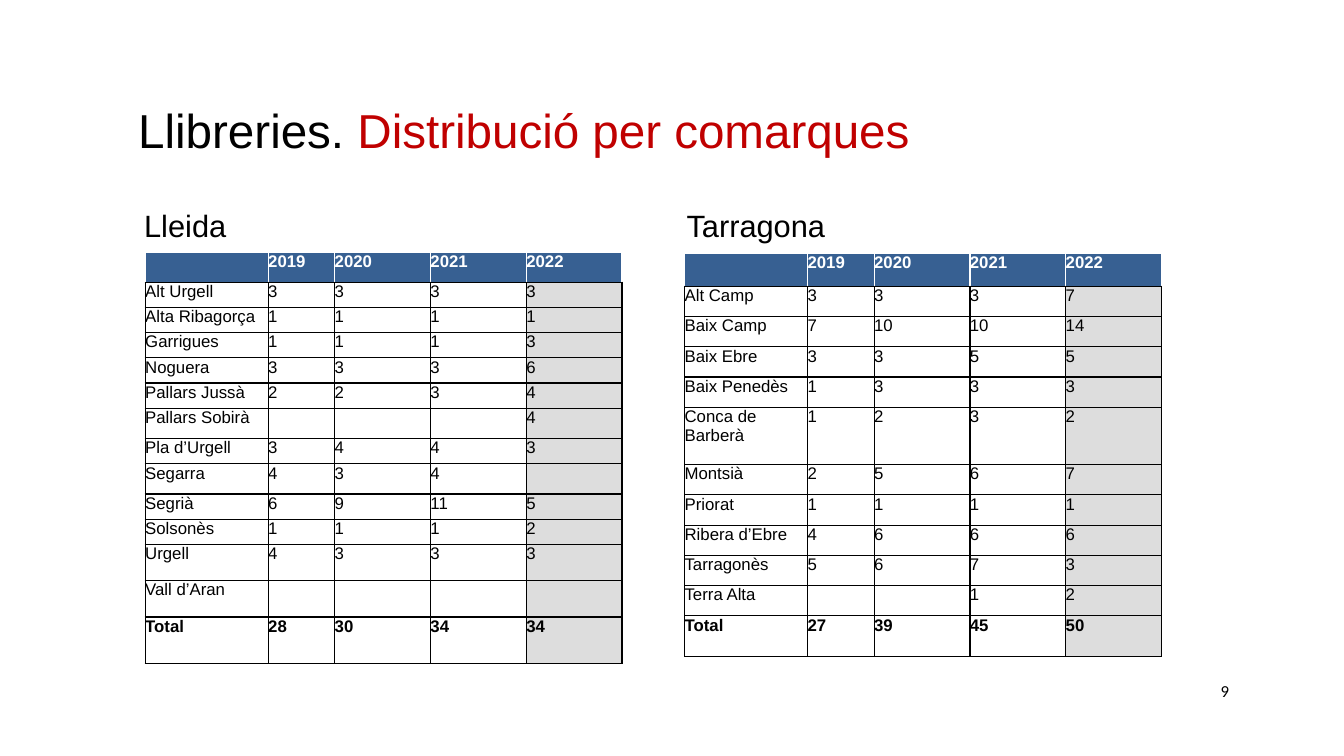
from lxml.etree import SubElement
from pptx import Presentation
from pptx.dml.color import RGBColor
from pptx.enum.text import MSO_ANCHOR as Anchor, MSO_AUTO_SIZE as AutoSize, PP_ALIGN as Align
from pptx.oxml.ns import qn
from pptx.util import Pt

PX = 9144
BLACK = RGBColor(0x00, 0x00, 0x00)
WHITE = RGBColor(0xFF, 0xFF, 0xFF)
RED = RGBColor(0xC0, 0x00, 0x00)
BLUE = RGBColor(0x37, 0x60, 0x92)
GREY = RGBColor(0xDD, 0xDD, 0xDD)

COLUMNS = [122, 66, 95, 95, 95]
YEARS = ["", "2019", "2020", "2021", "2022"]
LLEIDA = [
    ["Alt Urgell", "3", "3", "3", "3"],
    ["Alta Ribagorça", "1", "1", "1", "1"],
    ["Garrigues", "1", "1", "1", "3"],
    ["Noguera", "3", "3", "3", "6"],
    ["Pallars Jussà", "2", "2", "3", "4"],
    ["Pallars Sobirà", "", "", "", "4"],
    ["Pla d’Urgell", "3", "4", "4", "3"],
    ["Segarra", "4", "3", "4", ""],
    ["Segrià", "6", "9", "11", "5"],
    ["Solsonès", "1", "1", "1", "2"],
    ["Urgell", "4", "3", "3", "3"],
    ["Vall d’Aran", "", "", "", ""],
    ["Total", "28", "30", "34", "34"],
]
TARRAGONA = [
    ["Alt Camp", "3", "3", "3", "7"],
    ["Baix Camp", "7", "10", "10", "14"],
    ["Baix Ebre", "3", "3", "5", "5"],
    ["Baix Penedès", "1", "3", "3", "3"],
    ["Conca de Barberà", "1", "2", "3", "2"],
    ["Montsià", "2", "5", "6", "7"],
    ["Priorat", "1", "1", "1", "1"],
    ["Ribera d’Ebre", "4", "6", "6", "6"],
    ["Tarragonès", "5", "6", "7", "3"],
    ["Terra Alta", "", "", "1", "2"],
    ["Total", "27", "39", "45", "50"],
]
LLEIDA_HEIGHTS = [28] + [25] * 10 + [36, 36, 46]
TARRAGONA_HEIGHTS = [33] + [30] * 4 + [57] + [30] * 5 + [40]


def add_run(para, text, size, color, font="Arial", bold=False):
    """Add one formatted run to a paragraph."""
    span = para.add_run()
    span.text = text
    span.font.name = font
    span.font.size = Pt(size)
    span.font.bold = bold
    span.font.color.rgb = color


def place_text(shape, box, anchor=Anchor.TOP, align=Align.LEFT, wrap=True):
    """Move a text shape into its box and return its first paragraph."""
    shape.left, shape.top, shape.width, shape.height = [value * PX for value in box]
    frame = shape.text_frame
    frame.margin_left = frame.margin_right = 5 * PX
    frame.margin_top = frame.margin_bottom = 5 * PX
    frame.word_wrap = wrap
    frame.auto_size = AutoSize.SHAPE_TO_FIT_TEXT
    frame.vertical_anchor = anchor
    frame.paragraphs[0].alignment = align
    return frame.paragraphs[0]


def add_title(page, box):
    """Fill the title placeholder with its two coloured parts."""
    para = place_text(page.shapes.title, box)
    add_run(para, "Llibreries. ", 34, BLACK)
    add_run(para, "Distribució per comarques", 34, RED)


def add_borders(cell, side_color, bottom_color):
    """Draw one-point borders around a cell."""
    properties = cell._tc.get_or_add_tcPr()
    for side in "LRTB":
        line = SubElement(properties, qn(f"a:ln{side}"), w=str(Pt(1)))
        fill = SubElement(line, qn("a:solidFill"))
        color = bottom_color if side == "B" else side_color
        SubElement(fill, qn("a:srgbClr"), val=str(color))


def fill_cell(cell, text, background, color, bold, border):
    """Give a cell its text, fill and borders."""
    cell.margin_left = cell.margin_right = cell.margin_top = cell.margin_bottom = 0
    add_borders(cell, border, BLACK)
    cell.fill.solid()
    cell.fill.fore_color.rgb = background
    if text:
        add_run(cell.text_frame.paragraphs[0], text, 12, color, bold=bold)


def add_table(page, box, rows, heights):
    """Add a table of counties by year with the last year shaded."""
    left, top = box
    frame = page.shapes.add_table(len(rows), len(COLUMNS), left * PX, top * PX,
                                  sum(COLUMNS) * PX, sum(heights) * PX)
    table = frame.table
    table.first_row = table.horz_banding = False
    for column, width in zip(table.columns, COLUMNS):
        column.width = width * PX
    for row_index, (values, height) in enumerate(zip(rows, heights)):
        table.rows[row_index].height = height * PX
        header = row_index == 0
        total = row_index == len(rows) - 1
        for column_index, text in enumerate(values):
            shade = GREY if column_index == len(COLUMNS) - 1 else WHITE
            fill_cell(table.cell(row_index, column_index), text,
                      BLUE if header else shade, WHITE if header else BLACK,
                      header or total, WHITE if header else BLACK)


def add_province(page, heading_box, table_box, name, rows, heights):
    """Add a province heading with its table below."""
    heading = page.shapes.add_textbox(0, 0, 0, 0)
    add_run(place_text(heading, heading_box), name, 22, BLACK)
    add_table(page, table_box, [YEARS] + rows, heights)


def add_page_number(page, box):
    """Add the page number at the lower right."""
    number = page.shapes.add_textbox(0, 0, 0, 0)
    para = place_text(number, box, Anchor.MIDDLE, Align.RIGHT, False)
    add_run(para, "9", 12, BLACK, "Calibri")


def main():
    """Build the slide and save it."""
    deck = Presentation()
    deck.slide_width, deck.slide_height = 1333 * PX, 750 * PX
    page = deck.slides.add_slide(deck.slide_layouts[5])
    add_title(page, (132, 95, 863, 67))
    add_province(page, (676, 200, 518, 46), (679, 251), "Tarragona",
                 TARRAGONA, TARRAGONA_HEIGHTS)
    add_province(page, (138, 200, 518, 46), (144, 250), "Lleida",
                 LLEIDA, LLEIDA_HEIGHTS)
    add_page_number(page, (1205, 670, 19, 30))
    deck.save("out.pptx")


if __name__ == "__main__":
    main()
